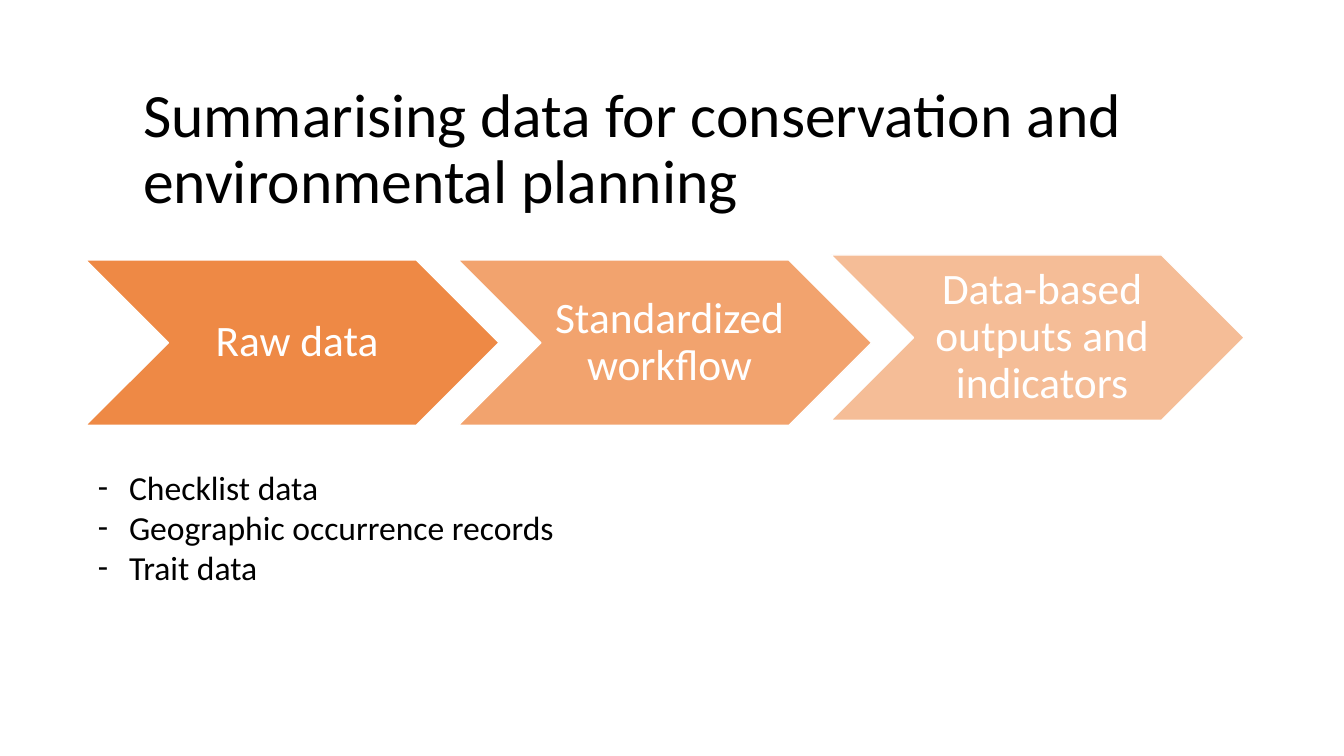
from pptx import Presentation
from pptx.dml.color import RGBColor
from pptx.enum.shapes import MSO_SHAPE
from pptx.enum.text import MSO_ANCHOR, MSO_AUTO_SIZE, PP_ALIGN
from pptx.oxml.ns import qn
from pptx.util import Inches, Pt
from lxml.etree import SubElement

# Content
TITLE = "Summarising data for conservation and environmental planning"
# label, top in inches, opacity in percent
STEPS = [
    ("Raw data", 2.58, 90),
    ("Standardized workflow", 2.58, 70),
    ("Data-based outputs and indicators", 2.53, 50),
]
RAW_DATA_TYPES = ["Checklist data", "Geographic occurrence records", "Trait data"]

# Style and layout
FONT = "Calibri"
BLACK = RGBColor(0x00, 0x00, 0x00)
WHITE = RGBColor(0xFF, 0xFF, 0xFF)
ORANGE = RGBColor(0xED, 0x7D, 0x31)
STEP_LEFT, STEP_PITCH = 0.85, 3.695
STEP_WIDTH, STEP_HEIGHT = 4.1, 1.64


def place(shape, left, top, width, height):
    shape.left, shape.top = Inches(left), Inches(top)
    shape.width, shape.height = Inches(width), Inches(height)


def format_paragraph(para, size, color, align, line_spacing):
    para.alignment = align
    para.line_spacing = line_spacing
    para.space_before = para.space_after = Pt(0)
    for span in para.runs:
        span.font.name = FONT
        span.font.size = Pt(size)
        span.font.color.rgb = color


def add_dash(para, indent):
    properties = para._p.get_or_add_pPr()
    properties.set("marL", str(Inches(indent)))
    properties.set("indent", str(-Inches(indent)))
    SubElement(properties, qn("a:buFont"), typeface=FONT)
    SubElement(properties, qn("a:buChar"), char="-")


def add_step(page, index, label, top, opacity):
    chevron = page.shapes.add_shape(
        MSO_SHAPE.CHEVRON, Inches(STEP_LEFT + index * STEP_PITCH), Inches(top),
        Inches(STEP_WIDTH), Inches(STEP_HEIGHT))
    chevron.shadow.inherit = False
    chevron.fill.solid()
    chevron.fill.fore_color.rgb = ORANGE
    color = chevron._element.spPr.find(qn("a:solidFill")).find(qn("a:srgbClr"))
    SubElement(color, qn("a:alpha"), val=str(opacity * 1000))
    chevron.line.color.rgb = WHITE
    chevron.line.width = Pt(1)

    frame = chevron.text_frame
    frame.text = label
    frame.word_wrap = True
    frame.vertical_anchor = MSO_ANCHOR.MIDDLE
    frame.margin_left = Inches(0.14)
    frame.margin_right = frame.margin_top = frame.margin_bottom = Inches(0.05)
    format_paragraph(frame.paragraphs[0], 31, WHITE, PP_ALIGN.CENTER, 0.9)


def main():
    deck = Presentation()
    deck.slide_width, deck.slide_height = Inches(13.33), Inches(7.5)
    page = deck.slides.add_slide(deck.slide_layouts[1])

    # Title
    title = page.shapes.title
    place(title, 1.32, 0.77, 10.43, 1.45)
    title.text_frame.text = TITLE
    title.text_frame.auto_size = MSO_AUTO_SIZE.NONE
    title.text_frame.vertical_anchor = MSO_ANCHOR.MIDDLE
    format_paragraph(title.text_frame.paragraphs[0], 44, BLACK, PP_ALIGN.LEFT, 0.9)

    # Process chevrons
    for index, step in enumerate(STEPS):
        add_step(page, index, *step)

    # Kinds of raw data
    body = page.placeholders[1]
    place(body, 0.87, 4.58, 4.98, 1.31)
    body.text_frame.text = "\n".join(RAW_DATA_TYPES)
    body.text_frame.auto_size = MSO_AUTO_SIZE.NONE
    for para in body.text_frame.paragraphs:
        format_paragraph(para, 24, BLACK, PP_ALIGN.LEFT, 1.0)
        add_dash(para, 0.31)

    deck.save("out.pptx")


if __name__ == "__main__":
    main()
